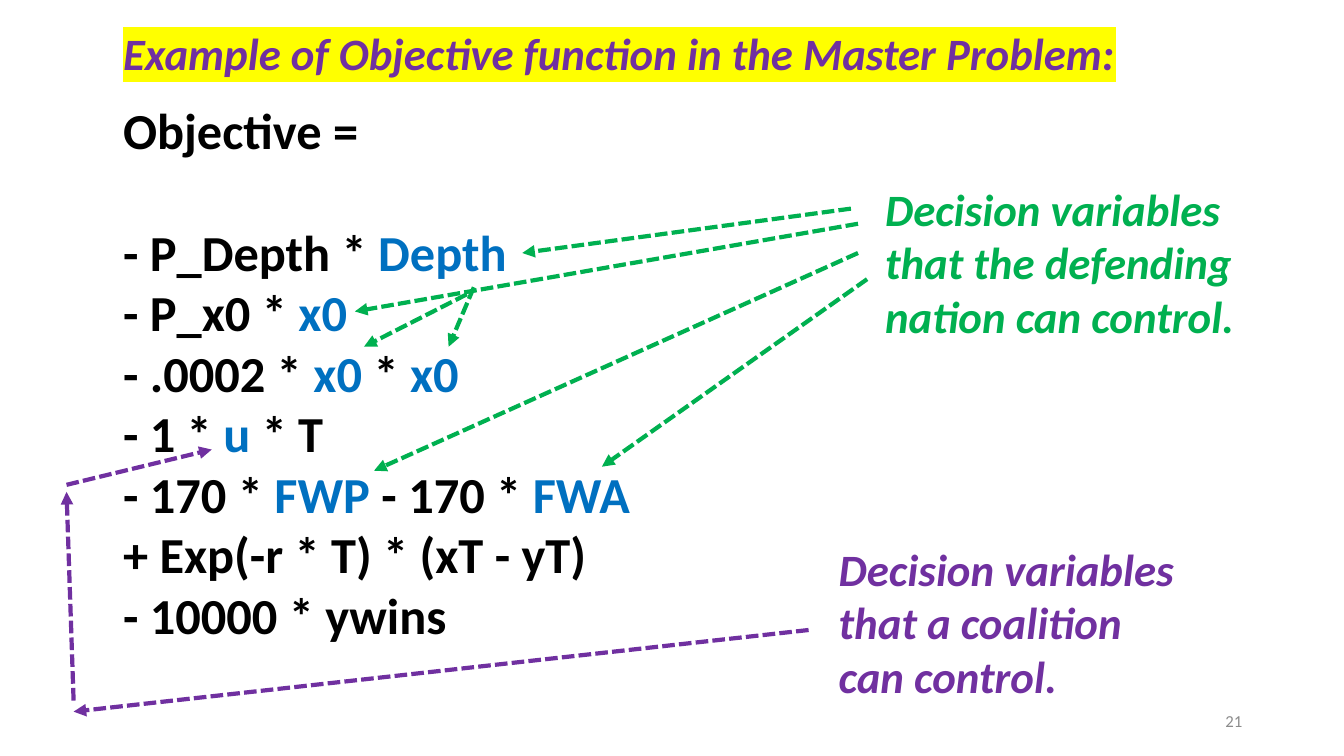
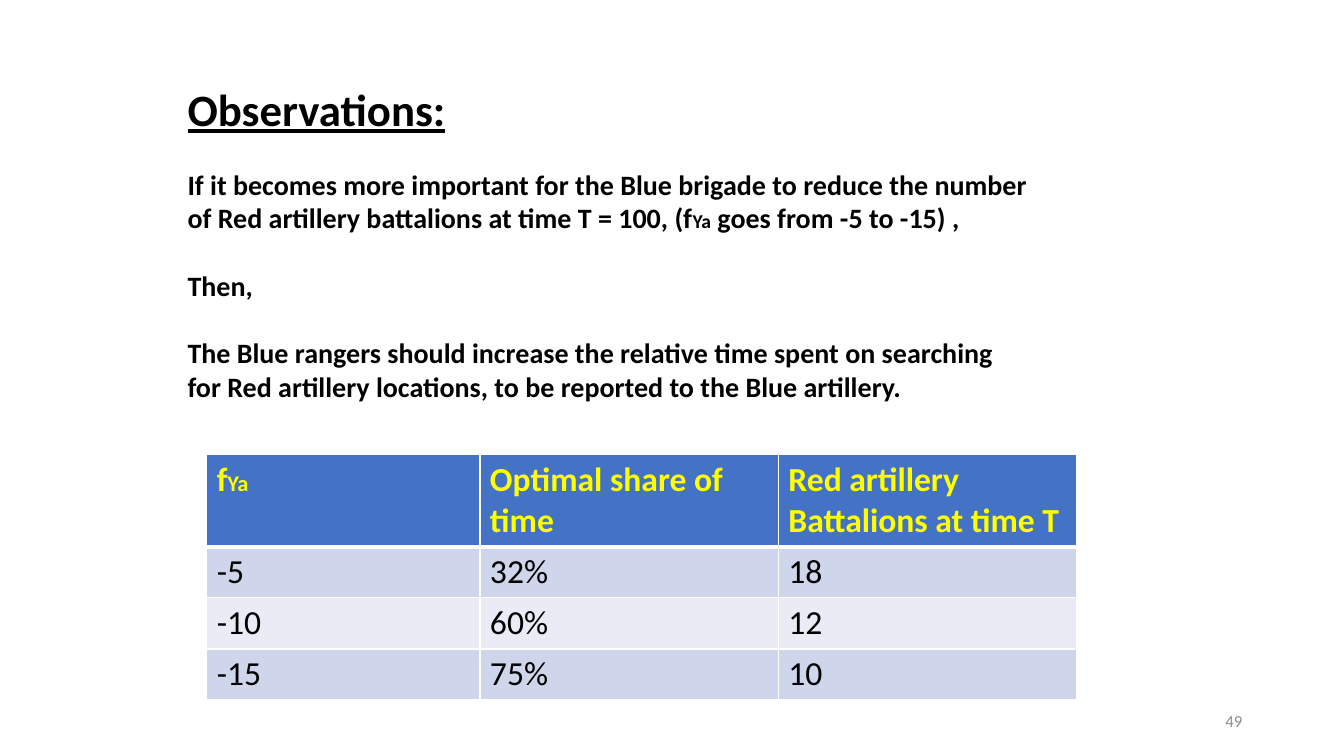
from lxml import etree
from pptx import Presentation
from pptx.dml.color import RGBColor
from pptx.enum.dml import MSO_LINE
from pptx.enum.shapes import MSO_CONNECTOR
from pptx.enum.text import MSO_ANCHOR, MSO_AUTO_SIZE, PP_ALIGN
from pptx.oxml.ns import qn
from pptx.util import Inches, Pt

STRAIGHT = MSO_CONNECTOR.STRAIGHT
DASH = MSO_LINE.SQUARE_DOT
TOP, MIDDLE = MSO_ANCHOR.TOP, MSO_ANCHOR.MIDDLE
NO_FIT = MSO_AUTO_SIZE.NONE
LEFT, RIGHT = PP_ALIGN.LEFT, PP_ALIGN.RIGHT

FONT = "Calibri"
BLACK, WHITE, GREY, YELLOW = "000000", "FFFFFF", "8C8C8C", "FFFF00"
BLUE, GREEN, PURPLE = "0070C0", "00B050", "7030A0"
HEADER_FILL, ROW_FILLS = "4472C4", ("CFD5EA", "E9EBF5")
TITLE_FORMAT = dict(size=Pt(32), bold=True)
NUMBER_BOX = (9.42, 6.95, 3, 0.4)


def rgb(value):
    return RGBColor.from_string(value)


def inches(box):
    return [Inches(length) for length in box]


def write(paragraph, text, color=BLACK, accent=None, **text_format):
    """Write the text; every second piece between bars takes the accent format."""
    paragraph.alignment = paragraph.alignment or LEFT
    for index, piece in enumerate(text.split("|")):
        run = paragraph.add_run()
        run.text = piece
        values = {"name": FONT, "color": color, **text_format}
        if index % 2:
            values.update(accent)
        run.font.color.rgb = rgb(values.pop("color"))
        for attribute, value in values.items():
            setattr(run.font, attribute, value)


def write_lines(frame, lines, gaps=None, **text_format):
    """Write one paragraph per line; gaps maps a line index to the space after it."""
    for index, line in enumerate(lines):
        paragraph = frame.paragraphs[0] if index == 0 else frame.add_paragraph()
        paragraph.space_before = Pt(0)
        paragraph.space_after = Pt((gaps or {}).get(index, 0))
        write(paragraph, line, **text_format)


def place(placeholder, box):
    placeholder.left, placeholder.top, placeholder.width, placeholder.height = inches(box)
    frame = placeholder.text_frame
    frame.word_wrap, frame.auto_size, frame.vertical_anchor = True, NO_FIT, TOP
    return frame


def add_title(slide, box, text, highlight=None, **text_format):
    paragraph = place(slide.shapes.title, box).paragraphs[0]
    write(paragraph, text, **TITLE_FORMAT, **text_format)
    if highlight:
        mark = etree.Element(qn("a:highlight"))
        etree.SubElement(mark, qn("a:srgbClr"), val=highlight)
        paragraph.runs[0].font._element.find(qn("a:solidFill")).addnext(mark)


def add_body(slide, box, lines, gaps, **text_format):
    frame = place(slide.placeholders[1], box)
    write_lines(frame, lines, gaps, bold=True, **text_format)
    for paragraph in frame.paragraphs:
        properties = paragraph._p.get_or_add_pPr()
        properties.set("marL", "0")
        properties.set("indent", "0")
        etree.SubElement(properties, qn("a:buNone"))


def add_number(slide, number):
    frame = slide.shapes.add_textbox(*inches(NUMBER_BOX)).text_frame
    frame.word_wrap, frame.vertical_anchor = True, MIDDLE
    frame.paragraphs[0].alignment = RIGHT
    write(frame.paragraphs[0], number, GREY, size=Pt(12))


def add_arrow(slide, start, end, color):
    arrow = slide.shapes.add_connector(STRAIGHT, *inches((*start, *end)))
    arrow.line.color.rgb = rgb(color)
    arrow.line.width, arrow.line.dash_style = Pt(3), DASH
    etree.SubElement(arrow.line._get_or_add_ln(), qn("a:tailEnd"), type="triangle")
    etree.SubElement(arrow._element.spPr, qn("a:effectLst"))


def add_callout(slide, box, lines, color, arrows):
    """Label with arrows, whose ends are offsets from the label's corner."""
    left, top = box[:2]
    frame = slide.shapes.add_textbox(*inches(box)).text_frame
    frame.word_wrap = False
    write_lines(frame, lines, color=color, size=Pt(32), bold=True, italic=True)
    for ends in arrows:
        start, end = [(left + x, top + y) for x, y in ends]
        add_arrow(slide, start, end, color)


def style_cell(cell, fill, top_width, bottom_width):
    cell.fill.solid()
    cell.fill.fore_color.rgb = rgb(fill)
    properties = cell._tc.get_or_add_tcPr()
    widths = {"lnL": 1, "lnR": 1, "lnT": top_width, "lnB": bottom_width}
    for index, (side, width) in enumerate(widths.items()):
        border = etree.Element(qn(f"a:{side}"), w=str(Pt(width)))
        solid = etree.SubElement(border, qn("a:solidFill"))
        etree.SubElement(solid, qn("a:srgbClr"), val=WHITE)
        properties.insert(index, border)


def add_results(slide, box, column_widths, row_heights, rows):
    table = slide.shapes.add_table(len(rows), len(rows[0]), *inches(box)).table
    table.first_row = table.horz_banding = False
    for column, width in zip(table.columns, column_widths):
        column.width = Inches(width)
    for row, height in zip(table.rows, row_heights):
        row.height = Inches(height)
    for r, row in enumerate(rows):
        header = r == 0
        for c, text in enumerate(row):
            cell = table.cell(r, c)
            fill = HEADER_FILL if header else ROW_FILLS[(r - 1) % 2]
            style_cell(cell, fill, 3 if r == 1 else 1, 3 if header else 1)
            write_lines(cell.text_frame, text.split("\n"), size=Pt(24), bold=header,
                        color=YELLOW if header else BLACK, accent={"size": Pt(16)})


def build_objective(slide):
    add_title(slide, (1.12, 0.2, 10.92, 0.64),
              "Example of Objective function in the Master Problem:",
              highlight=YELLOW, color=PURPLE, italic=True)
    add_body(slide, (1.12, 0.93, 11.56, 5.55), [
        "Objective =",
        "- P_Depth * |Depth",
        "- P_x0 * |x0",
        "- .0002 * |x0| * |x0",
        "- 1 * |u| * T",
        "- 170 * |FWP| - 170 * |FWA",
        "+ Exp(-r * T) * (xT - yT)",
        "- 10000 * ywins",
    ], {0: 44}, size=Pt(36), accent={"color": BLUE})
    # Who controls which variables
    add_callout(slide, (8.68, 1.75, 3.7, 1.72),
                ["Decision variables", "that the defending", "nation can control."], GREEN, [
                    ((-0.24, 0.32), (-3.5, 0.76)),
                    ((-0.17, 0.47), (-5.16, 1.34)),
                    ((-0.17, 0.76), (-4.97, 2.92)),
                    ((-0.08, 1.02), (-2.71, 2.88)),
                    ((-4.05, 1.17), (-5.07, 1.69)),
                    ((-3.98, 1.1), (-4.23, 1.69)),
                ])
    add_callout(slide, (8.22, 5.32, 3.61, 1.72),
                ["Decision variables", "that a coalition", "can control."], PURPLE, [
                    ((-0.2, 0.93), (-7.49, 1.74)),
                    ((-7.49, 1.63), (-7.56, -0.44)),
                    ((-7.56, -0.51), (-6.12, -0.86)),
                ])


def build_observations(slide):
    add_title(slide, (1.76, 0.76, 8.64, 0.64), "Observations:", underline=True)
    add_body(slide, (1.76, 1.61, 8.64, 2.45), [
        "If it becomes more important for the Blue brigade to reduce the number of Red "
        "artillery battalions at time T = 100, (f|Ya| goes from -5 to -15) ,",
        "Then,",
        "The Blue rangers should increase the relative time spent on searching",
        "for Red artillery locations, to be reported to the Blue artillery.",
    ], {0: 24, 1: 24}, size=Pt(20), accent={"size": Pt(14)})
    add_results(slide, (2.05, 4.51, 8.64, 2.4), (2.71, 2.96, 2.96), (0.9, 0.5, 0.5, 0.5), [
        ("f|Ya", "Optimal share of time", "Red artillery\nBattalions at time T"),
        ("-5", "32%", "18"),
        ("-10", "60%", "12"),
        ("-15", "75%", "10"),
    ])


def main():
    deck = Presentation()
    deck.slide_width, deck.slide_height = inches((13.33, 7.5))
    for build, number in ((build_objective, "21"), (build_observations, "49")):
        slide = deck.slides.add_slide(deck.slide_layouts[1])
        build(slide)
        add_number(slide, number)
    deck.save("out.pptx")


if __name__ == "__main__":
    main()
